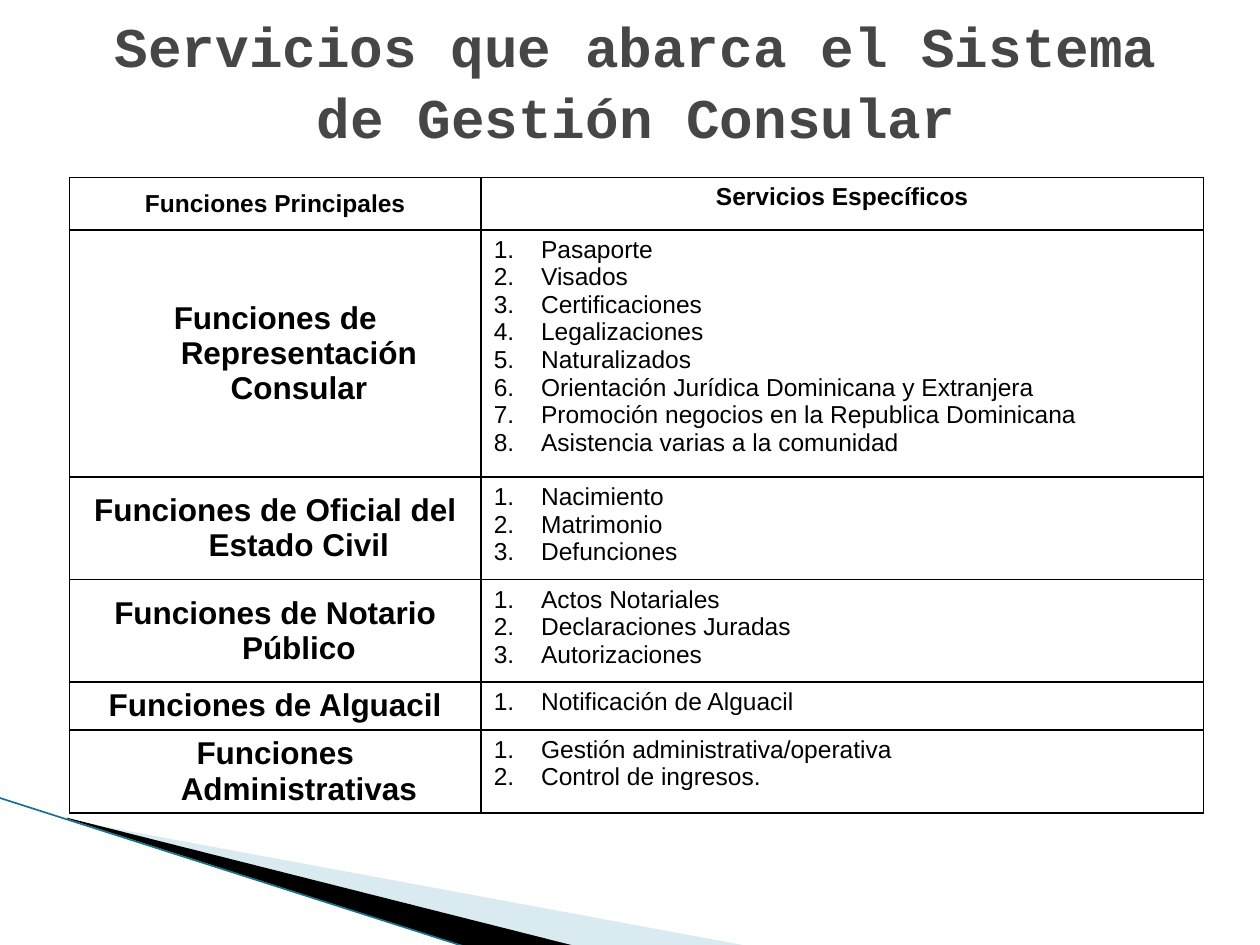
from dataclasses import dataclass

from lxml.etree import SubElement
from pptx import Presentation
from pptx.dml.color import RGBColor
from pptx.enum.shapes import MSO_CONNECTOR
from pptx.enum.text import MSO_ANCHOR, PP_ALIGN
from pptx.oxml.ns import qn
from pptx.util import Pt

COLORS = {"title": "464646", "text": "000000", "border": "000000",
          "light": "A0CBDC", "dark": "000000", "line": "1B7288"}
HANG = 27


@dataclass
class Band:
    color: str
    points: list[tuple[float, float]]
    opacity: int = 100


@dataclass
class Row:
    function: str
    services: list[str]
    height: float


BANDS = [
    Band("light", [(39.6, 468.7), (428.4, 540.7), (328.3, 540.7), (39.6, 468)], 40),
    Band("dark", [(38.2, 467.3), (329, 540.7), (267.8, 541.4), (38.9, 468)]),
]
ROWS = [
    Row("Funciones de Representación Consular",
        ["Pasaporte", "Visados", "Certificaciones", "Legalizaciones",
         "Naturalizados", "Orientación Jurídica Dominicana y Extranjera",
         "Promoción negocios en la Republica Dominicana",
         "Asistencia varias a la comunidad"], 141.4),
    Row("Funciones de Oficial del Estado Civil",
        ["Nacimiento", "Matrimonio", "Defunciones"], 58.5),
    Row("Funciones de Notario Público",
        ["Actos Notariales", "Declaraciones Juradas", "Autorizaciones"], 58.5),
    Row("Funciones de Alguacil", ["Notificación de Alguacil"], 26),
    Row("Funciones Administrativas",
        ["Gestión administrativa/operativa", "Control de ingresos."], 42.5),
]


def rgb(name: str) -> RGBColor:
    return RGBColor.from_string(COLORS[name])


def add_band(s, band: Band) -> None:
    points = [(Pt(x), Pt(y)) for x, y in band.points]
    builder = s.shapes.build_freeform(*points[0])
    builder.add_line_segments(points[1:], close=True)
    sp = builder.convert_to_shape()
    sp.shadow.inherit = False
    sp.line.fill.background()
    sp.fill.solid()
    sp.fill.fore_color.rgb = rgb(band.color)
    if band.opacity < 100:
        color = sp.fill._xPr.find(qn("a:solidFill"))[0]
        SubElement(color, qn("a:alpha"), val=str(band.opacity * 1000))


def add_edge(s) -> None:
    line = s.shapes.add_connector(MSO_CONNECTOR.STRAIGHT,
                                  Pt(-0.7), Pt(455.8), Pt(267.1), Pt(541.4))
    line.line.color.rgb = rgb("line")
    line.line.width = Pt(0.95)
    SubElement(line._element.spPr, qn("a:effectLst"))


def add_title(s, text: str) -> None:
    sp = s.shapes.title
    sp.left, sp.top, sp.width, sp.height = Pt(39.6), Pt(0), Pt(648), Pt(90)
    tf = sp.text_frame
    tf.word_wrap = True
    tf.vertical_anchor = MSO_ANCHOR.MIDDLE
    p = tf.paragraphs[0]
    p.alignment = PP_ALIGN.CENTER
    p.line_spacing = 1.06
    r = p.add_run()
    r.text = text
    r.font.name, r.font.size, r.font.bold = "Courier New", Pt(32), True
    r.font.color.rgb = rgb("title")


def set_borders(cell) -> None:
    """Draw all four edges; they must precede the fill in the cell properties."""
    tcPr = cell._tc.get_or_add_tcPr()
    for edge in ("lnL", "lnR", "lnT", "lnB"):
        ln = SubElement(tcPr, qn(f"a:{edge}"), w=str(Pt(1)))
        fill = SubElement(ln, qn("a:solidFill"))
        SubElement(fill, qn("a:srgbClr"), val=COLORS["border"])


def fill_cell(cell, lines: list[str], size: float, bold: bool = True,
              middle: bool = True, numbered: bool = False) -> None:
    set_borders(cell)
    cell.fill.background()
    cell.vertical_anchor = MSO_ANCHOR.MIDDLE if middle else MSO_ANCHOR.TOP
    tf = cell.text_frame
    for i, text in enumerate(lines):
        p = tf.add_paragraph() if i else tf.paragraphs[0]
        p.alignment = PP_ALIGN.LEFT if numbered else PP_ALIGN.CENTER
        pPr = p._p.get_or_add_pPr()
        pPr.set("marL", str(Pt(HANG)))
        pPr.set("indent", str(Pt(-HANG)))
        if numbered:
            SubElement(pPr, qn("a:buFont"), typeface="+mj-lt")
            SubElement(pPr, qn("a:buAutoNum"), type="arabicPeriod")
        r = p.add_run()
        r.text = text
        r.font.name, r.font.size, r.font.bold = "Arial", Pt(size), bold
        r.font.color.rgb = rgb("text")


def add_services(s, rows: list[Row]) -> None:
    heights = [30] + [row.height for row in rows]
    table = s.shapes.add_table(len(heights), 2, Pt(39.6), Pt(101.3),
                               Pt(648), Pt(sum(heights))).table
    table.first_row = table.horz_banding = False
    for column, width in zip(table.columns, (235.4, 412.6)):
        column.width = Pt(width)
    for row, height in zip(table.rows, heights):
        row.height = Pt(height)
    fill_cell(table.cell(0, 0), ["Funciones Principales"], 14)
    fill_cell(table.cell(0, 1), ["Servicios Específicos"], 14, middle=False)
    for i, row in enumerate(rows, start=1):
        fill_cell(table.cell(i, 0), [row.function], 18)
        fill_cell(table.cell(i, 1), row.services, 14, bold=False,
                  middle=False, numbered=True)


def main() -> None:
    prs = Presentation()
    prs.slide_width, prs.slide_height = Pt(720), Pt(540)
    s = prs.slides.add_slide(prs.slide_layouts[5])
    for band in BANDS:
        add_band(s, band)
    add_edge(s)
    add_title(s, "Servicios que abarca el Sistema de Gestión Consular")
    add_services(s, ROWS)
    prs.save("out.pptx")


if __name__ == "__main__":
    main()
